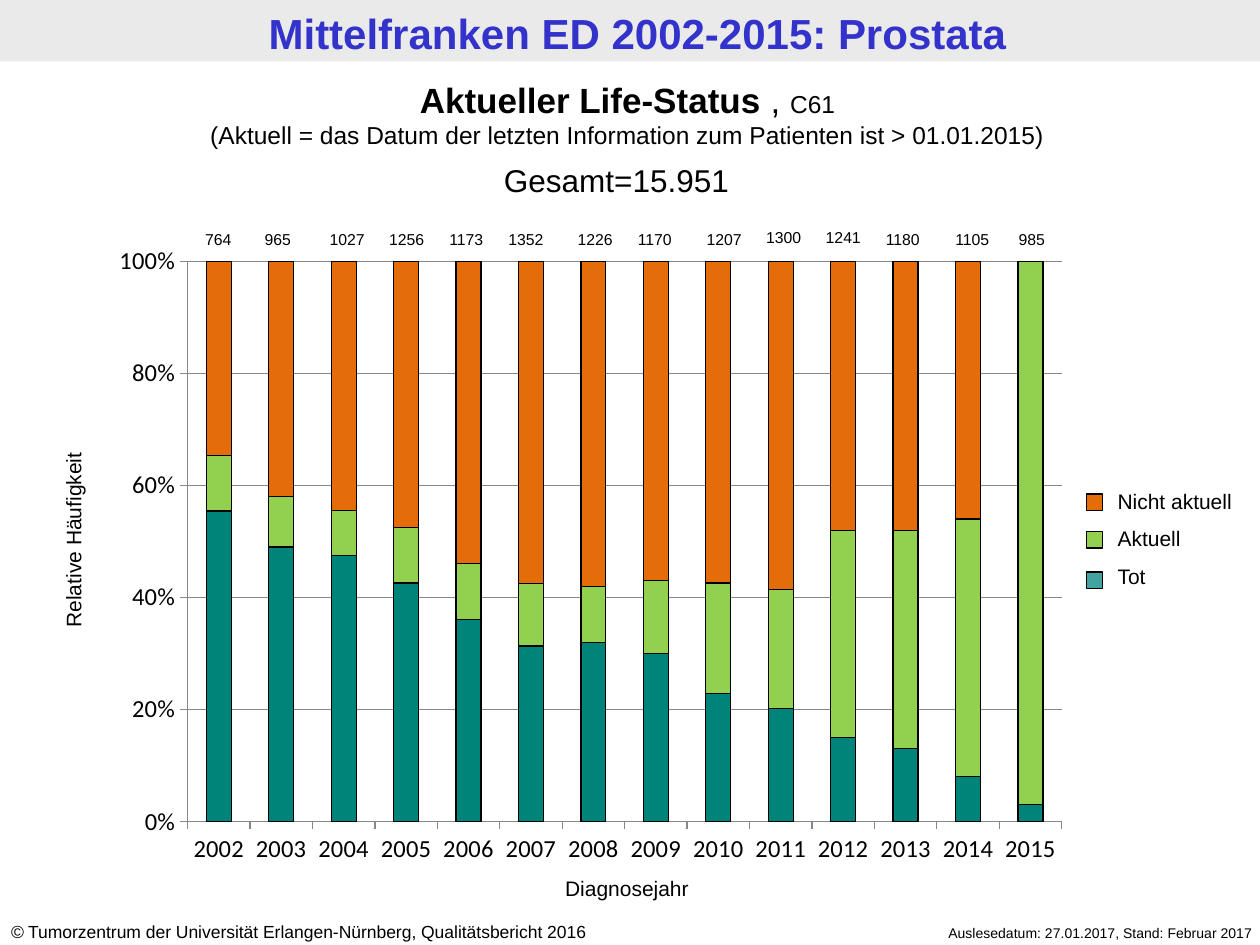
from dataclasses import dataclass
from typing import NamedTuple

from lxml.etree import SubElement
from pptx import Presentation
from pptx.chart.data import CategoryChartData
from pptx.dml.color import RGBColor
from pptx.enum.chart import XL_CHART_TYPE, XL_TICK_MARK
from pptx.enum.shapes import MSO_SHAPE
from pptx.enum.text import MSO_ANCHOR, MSO_AUTO_SIZE, PP_ALIGN
from pptx.oxml import parse_xml
from pptx.oxml.ns import nsdecls, qn
from pptx.util import Cm, Pt


@dataclass(frozen=True)
class Theme:
    font: str = "Arial"
    chart_font: str = "Calibri"
    black: str = "000000"
    title: str = "3333CC"
    band: str = "EAEAEA"
    axis: str = "878787"
    dead: str = "008378"
    dead_key: str = "008380"
    current: str = "92D050"
    outdated: str = "E46C0A"
    title_size: float = 24
    heading_size: float = 20
    total_size: float = 18
    note_size: float = 14
    label_size: float = 12
    source_size: float = 10
    count_size: float = 9
    date_size: float = 8
    outline: float = 0.75


THEME = Theme()


class Box(NamedTuple):
    """Left, top, width and height in centimetres."""
    left: float
    top: float
    width: float
    height: float

    def emu(self) -> list:
        return [Cm(v) for v in self]


class Run(NamedTuple):
    text: str
    size: float
    bold: bool = False
    italic: bool = False


class YearCount(NamedTuple):
    year: str
    count: str
    left: float
    top: float = 4.5


class Status(NamedTuple):
    name: str
    color: str
    values: tuple


class Key(NamedTuple):
    color: str
    top: float
    opacity: int = 100


YEARS = [
    YearCount("2002", "764", 3.7), YearCount("2003", "965", 4.9),
    YearCount("2004", "1027", 6.3), YearCount("2005", "1256", 7.5),
    YearCount("2006", "1173", 8.7), YearCount("2007", "1352", 9.9),
    YearCount("2008", "1226", 11.3), YearCount("2009", "1170", 12.5),
    YearCount("2010", "1207", 13.9), YearCount("2011", "1300", 15.1, 4.47),
    YearCount("2012", "1241", 16.3, 4.47), YearCount("2013", "1180", 17.5),
    YearCount("2014", "1105", 18.9), YearCount("2015", "985", 20.1),
]
STATUSES = [
    Status("Series 1", THEME.dead, (56, 49, 47, 43, 36, 31, 32, 30, 23, 20, 15, 13, 8, 3)),
    Status("Series 2", THEME.current, (10, 9, 8, 10, 10, 11, 10, 13, 20, 21, 37, 39, 46, 97)),
    Status("Series 3", THEME.outdated, (35, 42, 44, 48, 54, 57, 58, 57, 58, 58, 48, 48, 46, 0)),
]
KEYS = [Key(THEME.outdated, 9.96), Key(THEME.current, 10.72), Key(THEME.dead_key, 11.53, 74)]


def rgb(color: str) -> RGBColor:
    return RGBColor.from_string(color)


def write(tf, paragraphs: list, *, align=PP_ALIGN.LEFT, color=THEME.black, gap=0) -> None:
    """Fill a text frame with lists of runs; gap is the space between paragraphs."""
    tf.word_wrap = True
    for i, runs in enumerate(paragraphs):
        p = tf.add_paragraph() if i else tf.paragraphs[0]
        p.alignment = align
        p.space_before = Pt(gap if i else 0)
        for run in runs:
            r = p.add_run()
            r.text = run.text
            r.font.name = THEME.font
            r.font.size = Pt(run.size)
            r.font.bold = run.bold
            r.font.italic = run.italic
            r.font.color.rgb = rgb(color)


def add_text(slide, box: Box, *paragraphs: list, rotation=0, **style):
    sp = slide.shapes.add_textbox(*box.emu())
    sp.rotation = rotation
    write(sp.text_frame, paragraphs, **style)


def add_rect(slide, box: Box, color: str, opacity=100, outlined=True):
    sp = slide.shapes.add_shape(MSO_SHAPE.RECTANGLE, *box.emu())
    sp.shadow.inherit = False
    sp.fill.solid()
    sp.fill.fore_color.rgb = rgb(color)
    if opacity < 100:
        clr = sp.element.spPr.find(qn("a:solidFill"))[0]
        SubElement(clr, qn("a:alpha")).set("val", str(opacity * 1000))
    if outlined:
        sp.line.color.rgb = rgb(THEME.black)
        sp.line.width = Pt(THEME.outline)
    else:
        sp.line.fill.background()
    return sp


def add_title(slide) -> None:
    sp = slide.shapes.title
    sp.left, sp.top, sp.width, sp.height = Box(0.15, 0.03, 25.4, 1.24).emu()
    tf = sp.text_frame
    tf.auto_size = MSO_AUTO_SIZE.NONE
    tf.vertical_anchor = MSO_ANCHOR.MIDDLE
    tf.margin_left = tf.margin_right = Cm(0.23)
    tf.margin_top = tf.margin_bottom = Cm(0.1)
    write(tf, [[Run("Mittelfranken ED 2002-2015: Prostata", THEME.title_size, True)]],
          align=PP_ALIGN.CENTER, color=THEME.title)
    band = add_rect(slide, Box(0, 0, 25.4, 1.24), THEME.band, outlined=False)
    sp.element.addprevious(band.element)


def add_status_chart(slide) -> None:
    data = CategoryChartData()
    data.categories = [y.year for y in YEARS]
    for status in STATUSES:
        data.add_series(status.name, status.values)
    chart = slide.shapes.add_chart(
        XL_CHART_TYPE.COLUMN_STACKED_100, *Box(2, 4.75, 19.8, 12.98).emu(), data).chart
    chart.has_legend = chart.has_title = False
    chart.font.name = THEME.chart_font
    chart.font.size = Pt(THEME.note_size)
    chart.font.color.rgb = rgb(THEME.black)

    plot = chart.plots[0]
    plot.gap_width, plot.overlap, plot.vary_by_categories = 150, 100, False
    for series, status in zip(plot.series, STATUSES):
        series.format.fill.solid()
        series.format.fill.fore_color.rgb = rgb(status.color)
        series.format.line.color.rgb = rgb(THEME.black)
        series.format.line.width = Pt(THEME.outline)

    values = chart.value_axis
    values.minimum_scale, values.maximum_scale, values.major_unit = 0, 1, 0.2
    values.has_major_gridlines = True
    values.tick_labels.number_format = "0%"
    values.tick_labels.number_format_is_linked = False
    for axis in (values, chart.category_axis):
        axis.major_tick_mark = XL_TICK_MARK.OUTSIDE
        axis.tick_labels.font.size = Pt(THEME.note_size)
    for part in (values, chart.category_axis, values.major_gridlines):
        part.format.line.color.rgb = rgb(THEME.axis)
        part.format.line.width = Pt(THEME.outline)

    area = chart.element.chart.plotArea
    for old in area.findall(qn("c:layout")):
        area.remove(old)
    area.insert(0, parse_xml(
        f'<c:layout {nsdecls("c")}><c:manualLayout><c:layoutTarget val="inner"/>'
        '<c:xMode val="edge"/><c:yMode val="edge"/><c:x val="0.09"/><c:y val="0.04"/>'
        '<c:w val="0.89"/><c:h val="0.87"/></c:manualLayout></c:layout>'))


def main() -> None:
    prs = Presentation()
    prs.slide_width, prs.slide_height = Cm(25.4), Cm(19.05)
    slide = prs.slides.add_slide(prs.slide_layouts[5])
    center = PP_ALIGN.CENTER

    add_title(slide)
    add_text(slide, Box(-0.03, 18.44, 13.31, 0.69), [
        Run("©", THEME.source_size, italic=True),
        Run(" Tumorzentrum der Universität Erlangen-Nürnberg, Qualitätsbericht 2016",
            THEME.source_size)])
    add_text(slide, Box(16.89, 18.52, 8.61, 0.61),
             [Run("Auslesedatum: 27.01.2017, Stand: Februar 2017", THEME.date_size)],
             align=PP_ALIGN.RIGHT)

    add_status_chart(slide)
    add_text(slide, Box(-1.57, 10.49, 6.12, 0.79),
             [Run("Relative Häufigkeit", THEME.label_size)], rotation=270, align=center)
    add_text(slide, Box(9.78, 17.53, 5.72, 0.79),
             [Run("Diagnosejahr", THEME.label_size)], align=center)
    for y in YEARS:
        add_text(slide, Box(y.left, y.top, 1.4, 0.64),
                 [Run(y.count, THEME.count_size)], align=center)

    add_text(slide, Box(22.28, 9.73, 3.12, 2.31),
             *([Run(name, THEME.label_size)] for name in ("Nicht aktuell", "Aktuell", "Tot")),
             gap=6.8)
    for key in KEYS:
        add_rect(slide, Box(21.9, key.top, 0.33, 0.33), key.color, key.opacity)

    add_text(slide, Box(-0.1, 1.45, 25.5, 1.7),
             [Run("Aktueller Life-Status ", THEME.heading_size, True),
              Run(", ", THEME.heading_size), Run("C61", THEME.note_size)],
             [Run("(Aktuell = das Datum der letzten Information zum Patienten ist > 01.01.2015)",
                  THEME.note_size)], align=center)
    add_text(slide, Box(9.91, 3.12, 5.59, 1.02), [Run("Gesamt=15.951", THEME.total_size)])
    prs.save("out.pptx")


if __name__ == "__main__":
    main()
